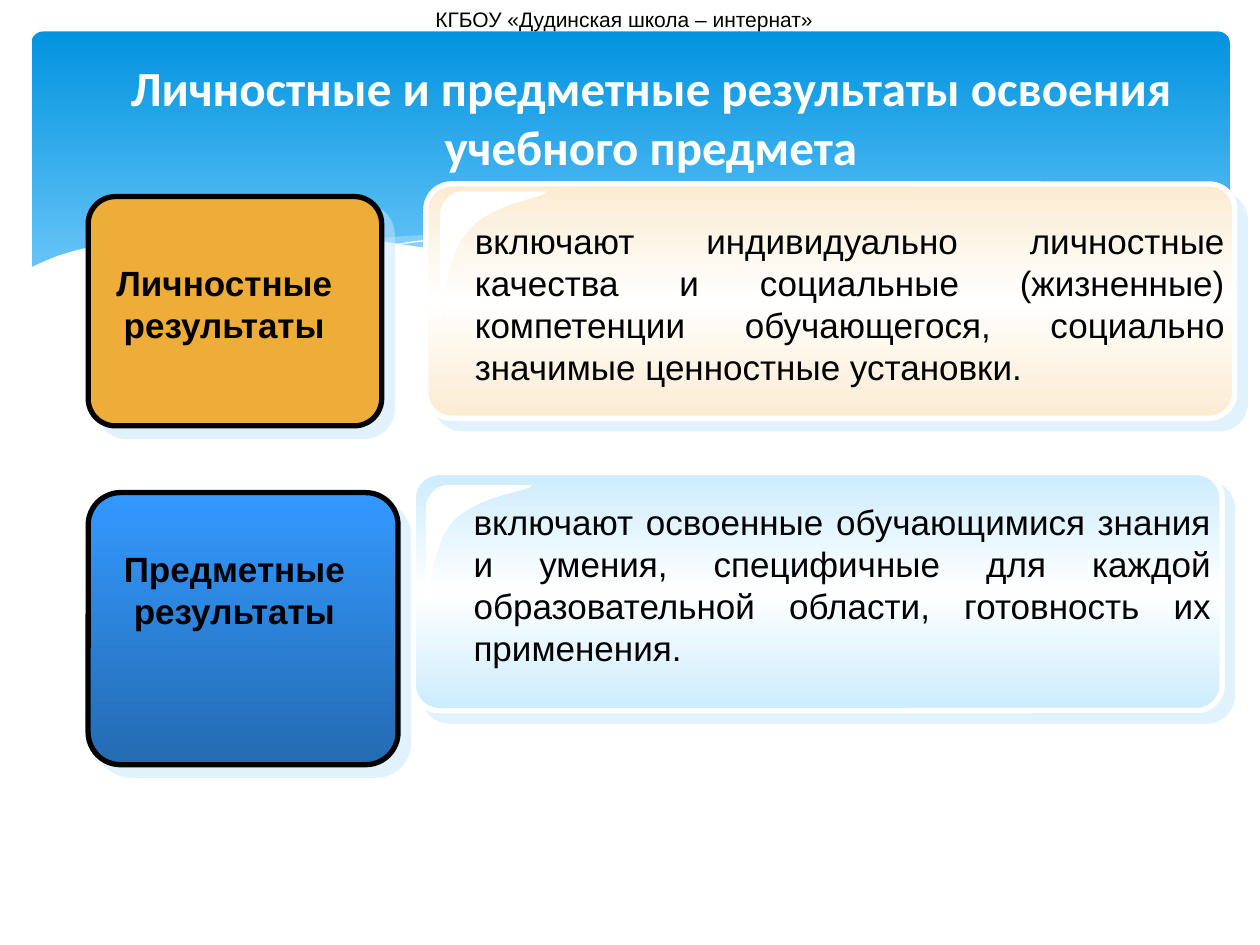
import pptx
import pptx.dml.color
import pptx.enum.shapes
import pptx.enum.text
import pptx.oxml
import pptx.oxml.ns
import pptx.util
from pptx.util import Inches

COLORS = {"white": "FFFFFF", "black": "000000", "pale": "C6E7FC", "orange": "EEAD38",
          "sky": "0293E0", "light_sky": "83D3FE", "blue": "3399FF", "deep_blue": "246BB2",
          "cream": "FBEBD1", "ice": "CCECFF"}

RIBBONS = [
    (29, [(9.76, 2), (9.48, 2.04), (9.21, 2.1), (8.61, 2.23), (8.05, 2.37), (7.53, 2.48),
          (7.06, 2.57), (6.61, 2.65), (6.91, 2.69), (7.32, 2.74), (7.69, 2.77), (8.14, 2.78),
          (8.54, 2.76), (8.89, 2.72), (9.21, 2.65), (9.49, 2.57), (9.76, 2.47)]),
    (40, [(8.93, 2.73), (8.37, 2.65), (7.75, 2.54), (7.06, 2.4), (6.29, 2.22), (5.84, 2.11),
          (5.41, 2.03), (5.02, 1.96), (4.65, 1.91), (4.2, 1.87), (3.8, 1.85), (3.44, 1.86),
          (3.13, 1.88), (2.86, 1.91), (3.23, 1.96), (3.62, 2.03), (4.04, 2.11), (4.49, 2.22),
          (5.3, 2.4), (6.01, 2.55), (6.5, 2.64), (6.95, 2.7), (7.36, 2.75), (7.73, 2.77),
          (8.18, 2.78), (8.57, 2.77), (8.76, 2.75)]),
]
STRANDS = [
    [(3.09, 1.95), (3.28, 1.92), (3.53, 1.89), (3.87, 1.87), (4.33, 1.87), (4.69, 1.89),
     (5.1, 1.92), (5.56, 1.97), (6.08, 2.04), (6.65, 2.13), (7.27, 2.26), (7.95, 2.41),
     (8.69, 2.61), (9.07, 2.72)],
    [(6.13, 2.57), (6.53, 2.46), (6.95, 2.35), (7.48, 2.23), (8.06, 2.1), (8.66, 1.99),
     (8.95, 1.94), (9.24, 1.9), (9.51, 1.87), (9.75, 1.85)],
]
WAVE = [(9.77, 2.46), (9.59, 2.53), (9.4, 2.59), (9.2, 2.65), (8.99, 2.69), (8.75, 2.73),
        (8.5, 2.75), (8.23, 2.77), (7.93, 2.76), (7.61, 2.75), (7.26, 2.72), (6.88, 2.68),
        (6.48, 2.62), (6.03, 2.54), (5.55, 2.45), (5.03, 2.33), (4.47, 2.2), (3.91, 2.07),
        (3.4, 1.97), (2.92, 1.9), (2.5, 1.86), (2.11, 1.84), (1.77, 1.84), (1.46, 1.85),
        (1.19, 1.87), (0.95, 1.91), (0.76, 1.95), (0.59, 1.99), (0.46, 2.03), (0.36, 2.07),
        (0.23, 2.13), (0.23, 3.29), (9.77, 3.29)]
GLINT_CURVES = [
    [(0.2, 0), (0.1, 0), (0, 0.09), (0, 0.2)],
    [(0, 0.99), (0.05, 1), (0.02, 0.52), (0.27, 0.29)],
    [(0.27, 0.29), (0.53, 0.07), (1, 0.05), (0.99, 0)],
]


def rgb(name):
    """Return a named colour."""
    return pptx.dml.color.RGBColor.from_string(COLORS[name])


def xml(text):
    """Parse a fragment of DrawingML."""
    return pptx.oxml.parse_xml(text.replace(">", f" {pptx.oxml.ns.nsdecls('a')}>", 1))


def paint(shape, stops):
    """Fill with one colour or with a downward gradient of (position, colour) stops."""
    if isinstance(stops, str):
        shape.fill.solid()
        shape.fill.fore_color.rgb = rgb(stops)
        return
    marks = "".join(f'<a:gs pos="{at * 1000}"><a:srgbClr val="{COLORS[name]}"/></a:gs>'
                    for at, name in stops)
    gradient = xml(f'<a:gradFill rotWithShape="1"><a:gsLst>{marks}</a:gsLst>'
                   '<a:lin ang="5400000" scaled="0"/></a:gradFill>')
    shape._element.spPr.find(pptx.oxml.ns.qn("a:prstGeom")).addnext(gradient)


def add_panel(page, place, corner, stops, outline=None):
    """Add a rounded panel; an outlined one also casts a pale shadow."""
    panel = page.shapes.add_shape(pptx.enum.shapes.MSO_SHAPE.ROUNDED_RECTANGLE,
                                  *map(Inches, place))
    panel.adjustments[0] = corner
    paint(panel, stops)
    panel.shadow.inherit = False
    if outline is None:
        panel.line.fill.background()
        return
    panel.line.color.rgb = rgb(outline)
    panel.line.width = pptx.util.Pt(3)
    effects = panel._element.spPr.find(pptx.oxml.ns.qn("a:effectLst"))
    effects.append(xml(
        f'<a:outerShdw blurRad="0" dist="{pptx.util.Pt(8.5)}" dir="2700000" algn="ctr" '
        f'rotWithShape="0"><a:srgbClr val="{COLORS["pale"]}"><a:alpha val="50000"/>'
        '</a:srgbClr></a:outerShdw>'))


def add_outline(page, points, color, opacity=100, closed=True):
    """Add a filled outline, or a hairline when it is open."""
    points = [(x * 1000, y * 1000) for x, y in points]
    builder = page.shapes.build_freeform(*points[0], scale=Inches(1) / 1000)
    builder.add_line_segments(points[1:], close=closed)
    shape = builder.convert_to_shape()
    shape.shadow.inherit = False
    if not closed:
        shape.fill.background()
        shape.line.color.rgb = rgb(color)
        shape.line.width = 0
        return
    paint(shape, color)
    shape.line.fill.background()
    if opacity < 100:
        tint = shape._element.spPr.find(".//" + pptx.oxml.ns.qn("a:srgbClr"))
        tint.append(xml(f'<a:alpha val="{opacity * 1000}"></a:alpha>'))


def bezier(corners, steps=12):
    """Return points along a cubic curve."""
    weights = [((1 - t) ** 3, 3 * t * (1 - t) ** 2, 3 * t * t * (1 - t), t ** 3)
               for t in (step / steps for step in range(steps + 1))]
    return [tuple(sum(w * corner[axis] for w, corner in zip(row, corners)) for axis in (0, 1))
            for row in weights]


def add_glint(page, left, top, width, height):
    """Add the white highlight in a panel's corner."""
    points = [(left + x * width, top + y * height)
              for curve in GLINT_CURVES for x, y in bezier(curve)]
    add_outline(page, points, "white")


def write(frame, text, size, align, font="Arial", color="black", bold=False):
    """Write one formatted paragraph into a text frame."""
    frame.word_wrap = True
    para = frame.paragraphs[0]
    para.alignment = align
    span = para.add_run()
    span.text = text
    span.font.size = pptx.util.Pt(size)
    span.font.name = font
    span.font.bold = bold
    span.font.color.rgb = rgb(color)


def add_text(page, place, text, size=20, align=pptx.enum.text.PP_ALIGN.CENTER, bold=False):
    """Add a text box that grows with its text."""
    box = page.shapes.add_textbox(*map(Inches, place))
    write(box.text_frame, text, size, align, bold=bold)
    box.text_frame.auto_size = pptx.enum.text.MSO_AUTO_SIZE.SHAPE_TO_FIT_TEXT


def add_title(page, place, text):
    """Place the title above the backdrop."""
    title = page.shapes.title
    title.left, title.top, title.width, title.height = map(Inches, place)
    page.shapes._spTree.append(title._element)
    title.text_frame.auto_size = pptx.enum.text.MSO_AUTO_SIZE.NONE
    title.text_frame.vertical_anchor = pptx.enum.text.MSO_ANCHOR.MIDDLE
    write(title.text_frame, text, 28, pptx.enum.text.PP_ALIGN.CENTER, "Calibri", "white", True)


def add_backdrop(page):
    """Draw the blue header with its waves."""
    add_panel(page, (0.25, 0.25, 9.51, 2.7), 0.034, [(0, "sky"), (90, "light_sky")])
    for opacity, points in RIBBONS:
        add_outline(page, points, "pale", opacity)
    for points in STRANDS:
        add_outline(page, points, "white", closed=False)
    add_outline(page, WAVE, "white")


def add_label(page, place, stops, text_place, text):
    """Add a black-edged panel naming a kind of result."""
    add_panel(page, place, 0.119, stops, "black")
    add_text(page, text_place, text, bold=True)


def add_description(page, place, edge, glint, text_place, text):
    """Add a glossy panel with justified text."""
    add_panel(page, place, 0.109, [(0, edge), (50, "white"), (100, edge)], "white")
    add_glint(page, *glint)
    add_text(page, text_place, text, align=pptx.enum.text.PP_ALIGN.JUSTIFY)


def main():
    """Build the slide and save it."""
    deck = pptx.Presentation()
    deck.slide_width, deck.slide_height = Inches(10), Inches(7.5)
    page = deck.slides.add_slide(deck.slide_layouts[5])
    add_backdrop(page)
    add_title(page, (0.5, 0.3, 9.33, 1.25),
              "Личностные и предметные результаты освоения учебного предмета")
    add_label(page, (0.7, 1.56, 2.33, 1.82), "orange",
              (0.7, 2.03, 2.16, 0.77), "Личностные результаты")
    add_label(page, (0.7, 3.91, 2.46, 2.16), [(0, "blue"), (100, "deep_blue")],
              (0.62, 4.3, 2.48, 0.77), "Предметные результаты")
    add_description(page, (3.38, 1.46, 6.42, 1.86), "cream", (3.49, 1.52, 0.85, 1.04),
                    (3.67, 1.69, 6.15, 1.98),
                    "включают индивидуально личностные качества и социальные (жизненные) "
                    "компетенции обучающегося, социально значимые ценностные установки.")
    add_description(page, (3.28, 3.75, 6.42, 1.89), "ice", (3.38, 3.85, 0.85, 0.94),
                    (3.66, 3.92, 6.05, 2.46),
                    "включают освоенные обучающимися знания и умения, специфичные для каждой "
                    "образовательной области, готовность их применения.")
    add_text(page, (0.23, 0, 9.45, 0.3), "КГБОУ «Дудинская школа – интернат»", size=12)
    deck.save("out.pptx")


if __name__ == "__main__":
    main()
